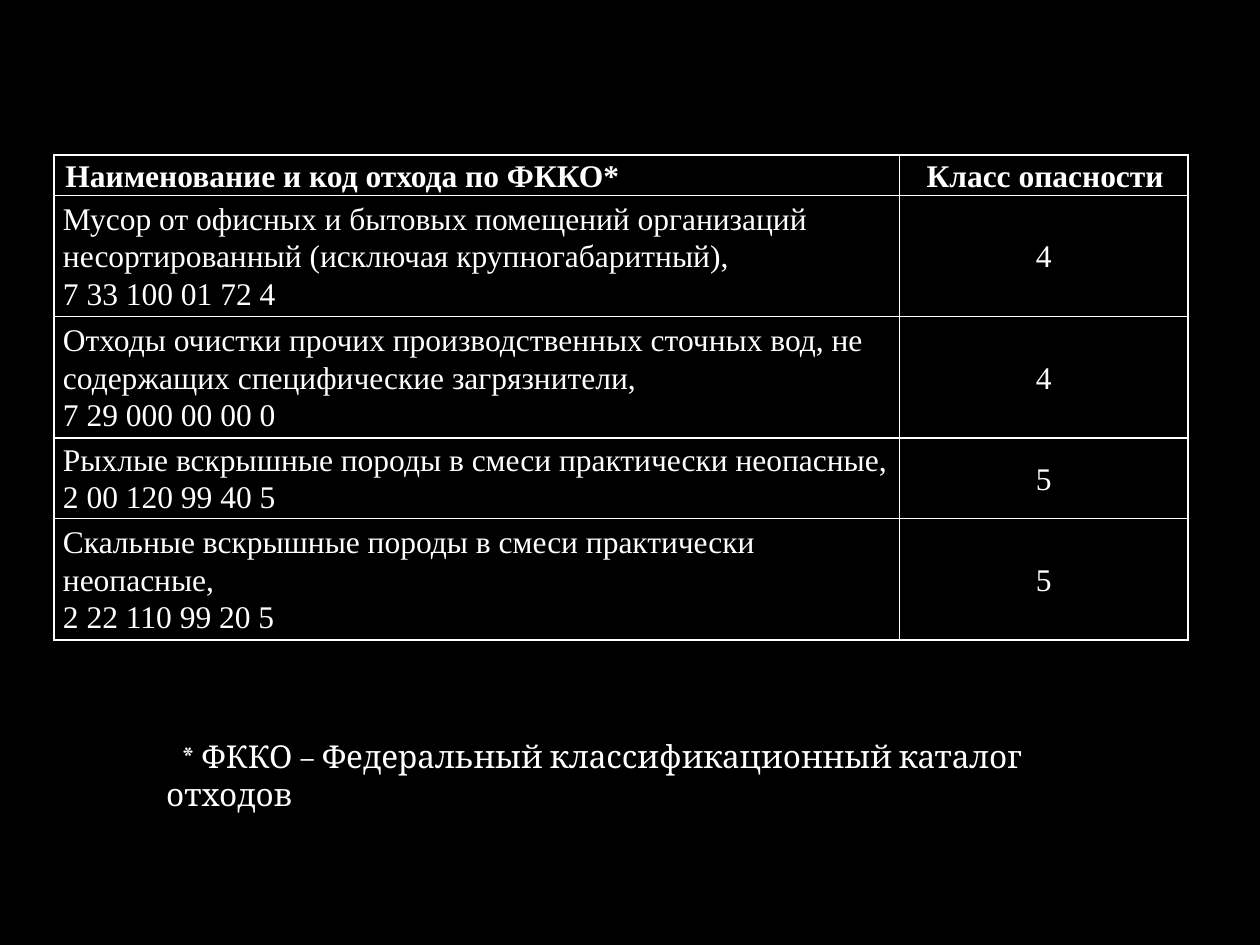
from lxml.etree import SubElement
from pptx import Presentation
from pptx.dml.color import RGBColor
from pptx.enum.text import MSO_ANCHOR, PP_ALIGN
from pptx.oxml.ns import qn
from pptx.util import Inches, Pt

BLACK = RGBColor(0x00, 0x00, 0x00)
WHITE = RGBColor(0xFF, 0xFF, 0xFF)

HEADER = ("Наименование и код отхода по ФККО*", "Класс опасности")
WASTES = [
    ("Мусор от офисных и бытовых помещений организаций несортированный "
     "(исключая крупногабаритный),\n7 33 100 01 72 4", "4"),
    ("Отходы очистки прочих производственных сточных вод, не содержащих "
     "специфические загрязнители,\n7 29 000 00 00 0", "4"),
    ("Рыхлые вскрышные породы в смеси практически неопасные, 2 00 120 99 40 5", "5"),
    ("Скальные вскрышные породы в смеси практически неопасные,\n2 22 110 99 20 5", "5"),
]
COLUMN_WIDTHS = (6.71, 2.29)
ROW_HEIGHTS = (0.32, 0.96, 0.96, 0.64, 0.96)


def style_text(para, font_name, bold=False):
    """Format every run of a paragraph in white 18 point type."""
    for span in para.runs:
        span.font.name = font_name
        span.font.size = Pt(18)
        span.font.bold = bold
        span.font.color.rgb = WHITE


def indent(para, left, first_line):
    """Set the left margin and first-line indent of a paragraph."""
    properties = para._p.get_or_add_pPr()
    properties.set("marL", str(Inches(left)))
    properties.set("indent", str(Inches(first_line)))


def add_borders(cell):
    """Draw a thin white line on all four sides of a cell."""
    properties = cell._tc.get_or_add_tcPr()
    for position, side in enumerate(("a:lnL", "a:lnR", "a:lnT", "a:lnB")):
        line = properties.makeelement(qn(side), {"w": str(Pt(1))})
        fill = SubElement(line, qn("a:solidFill"))
        SubElement(fill, qn("a:srgbClr"), val=str(WHITE))
        properties.insert(position, line)


def fill_cell(cell, text, centred, header):
    """Write and format one table cell."""
    cell.fill.background()
    cell.vertical_anchor = MSO_ANCHOR.MIDDLE
    cell.margin_left = cell.margin_right = Inches(0.07)
    cell.margin_top = cell.margin_bottom = 0
    cell.text_frame.text = text
    for para in cell.text_frame.paragraphs:
        para.line_spacing = 1.07
        if centred:
            para.alignment = PP_ALIGN.CENTER
        elif header:
            para.alignment = PP_ALIGN.JUSTIFY
        else:
            para.alignment = PP_ALIGN.LEFT
        if header:
            indent(para, 0.02, 0)
        style_text(para, "Times New Roman", bold=header)
    add_borders(cell)


def add_waste_table(page, left, top, width, height):
    """Place the table of wastes and their hazard classes."""
    rows = [HEADER, *WASTES]
    table = page.shapes.add_table(
        len(rows), len(HEADER), Inches(left), Inches(top), Inches(width), Inches(height)
    ).table
    for column, share in zip(table.columns, COLUMN_WIDTHS):
        column.width = Inches(width * share / sum(COLUMN_WIDTHS))
    for row, share in zip(table.rows, ROW_HEIGHTS):
        row.height = Inches(height * share / sum(ROW_HEIGHTS))
    for row_index, texts in enumerate(rows):
        for column_index, text in enumerate(texts):
            fill_cell(table.cell(row_index, column_index), text,
                      centred=column_index == 1, header=row_index == 0)


def add_footnote(page, left, top, width, height):
    """Place the note that explains the abbreviation."""
    box = page.shapes.add_textbox(Inches(left), Inches(top), Inches(width), Inches(height))
    box.text_frame.word_wrap = True
    para = box.text_frame.paragraphs[0]
    para.text = "* ФККО – Федеральный классификационный каталог отходов"
    indent(para, 0, 0.12)
    style_text(para, "Cambria")


def main():
    """Build and save the slide."""
    deck = Presentation()
    deck.slide_width, deck.slide_height = Inches(10), Inches(7.5)
    page = deck.slides.add_slide(deck.slide_layouts[6])
    page.background.fill.solid()
    page.background.fill.fore_color.rgb = BLACK
    add_waste_table(page, 0.43, 1.23, 9, 3.85)
    add_footnote(page, 1.22, 5.8, 7.08, 0.7)
    deck.save("out.pptx")


if __name__ == "__main__":
    main()
